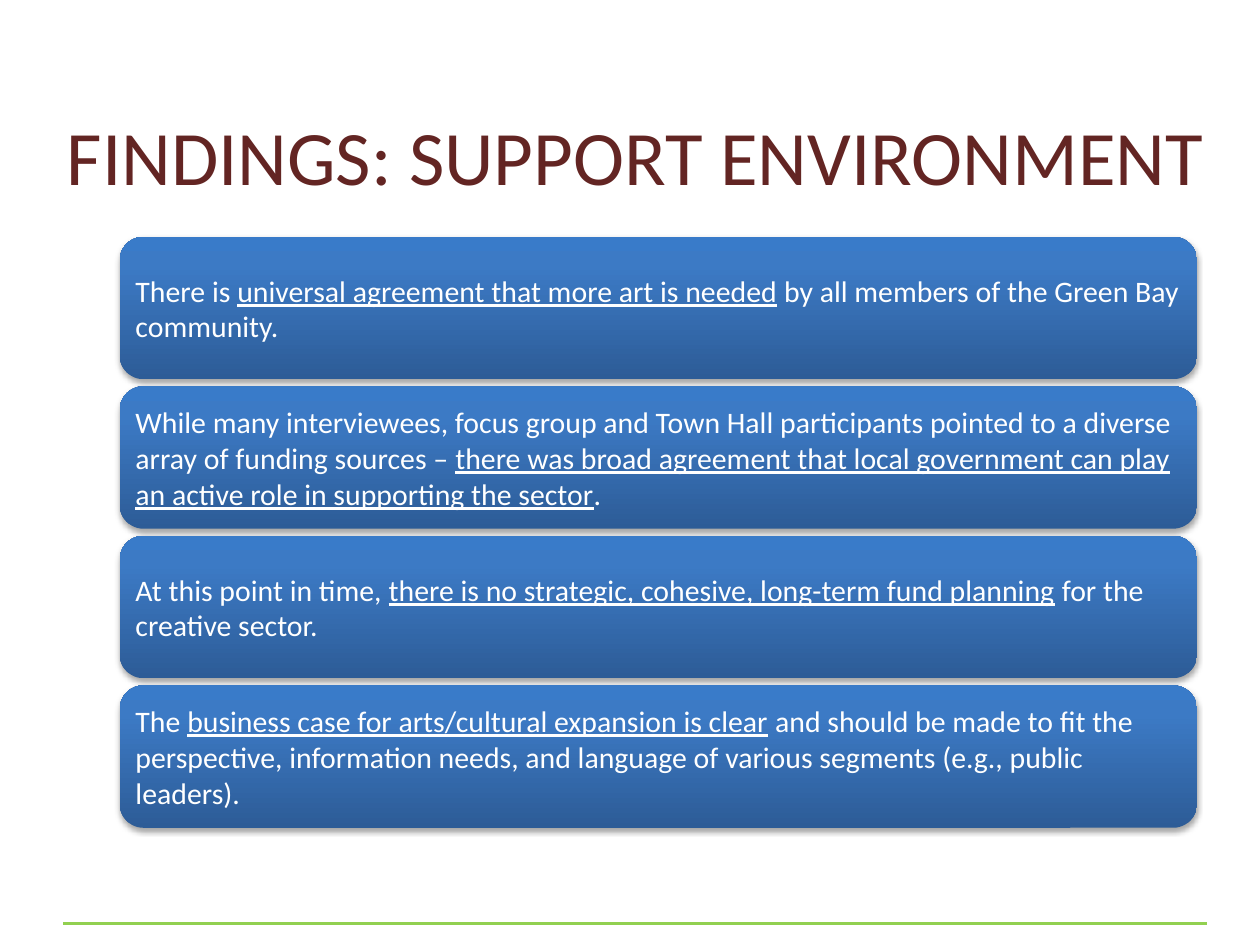
import copy
from typing import NamedTuple

import pptx
import pptx.dml.color
import pptx.enum.shapes
import pptx.enum.text
import pptx.oxml
import pptx.oxml.ns
import pptx.util
from pptx.util import Inches

COLORS = {
    "title": "632523",
    "card_text": "FFFFFF",
    "card_bottom": "2D5C97",
    "card_middle": "3C7AC5",
    "card_top": "397BC9",
    "footer_rule": "92D050",
    "shadow": "000000",
}
FONT = "Calibri"
CARD_LEFT, CARD_WIDTH, CARD_HEIGHT = 0.95, 8.55, 1.13
FIRST_CARD_TOP, LAST_CARD_TOP = 1.88, 5.44


class Finding(NamedTuple):
    lead: str
    key_point: str
    ending: str


FINDINGS = [
    Finding("There is ", "universal agreement that more art is needed",
            " by all members of the Green Bay community."),
    Finding("While many interviewees, focus group and Town Hall participants "
            "pointed to a diverse array of funding sources – ",
            "there was broad agreement that local government can play "
            "an active role in supporting the sector", "."),
    Finding("At this point in time, ",
            "there is no strategic, cohesive, long-term fund planning",
            " for the creative sector."),
    Finding("The ", "business case for arts/cultural expansion is clear",
            " and should be made to fit the perspective, information needs, "
            "and language of various segments (e.g., public leaders)."),
]


def rgb(name: str) -> pptx.dml.color.RGBColor:
    return pptx.dml.color.RGBColor.from_string(COLORS[name])


def set_frame(frame, margin_x: float, margin_y: float) -> None:
    settings = {
        "word_wrap": True,
        "vertical_anchor": pptx.enum.text.MSO_ANCHOR.MIDDLE,
        "margin_left": Inches(margin_x),
        "margin_right": Inches(margin_x),
        "margin_top": Inches(margin_y),
        "margin_bottom": Inches(margin_y),
    }
    for attribute, value in settings.items():
        setattr(frame, attribute, value)


def add_run(paragraph, text: str, size: int, color: str, underline: bool = False) -> None:
    run = paragraph.add_run()
    run.text = text
    settings = {"name": FONT, "size": pptx.util.Pt(size), "underline": underline}
    for attribute, value in settings.items():
        setattr(run.font, attribute, value)
    run.font.color.rgb = rgb(color)


def fill_card(card) -> None:
    """Apply a three-stop gradient running from the bottom edge to the top."""
    card.fill.gradient()
    card.fill.gradient_angle = 90
    stop_list = card.fill._xPr.find(".//" + pptx.oxml.ns.qn("a:gsLst"))
    stop_list.insert(1, copy.deepcopy(stop_list[0]))
    stops = [(0, "card_bottom"), (0.8, "card_middle"), (1, "card_top")]
    for stop, (position, color) in zip(card.fill.gradient_stops, stops):
        stop.position = position
        stop.color.rgb = rgb(color)


def cast_shadow(card) -> None:
    card.shadow.inherit = False
    effects = card._element.spPr.find(pptx.oxml.ns.qn("a:effectLst"))
    effects.append(pptx.oxml.parse_xml(
        f'<a:outerShdw {pptx.oxml.ns.nsdecls("a")} blurRad="{pptx.util.Pt(3.1)}" '
        f'dist="{pptx.util.Pt(1.8)}" dir="5400000" rotWithShape="0">'
        f'<a:srgbClr val="{COLORS["shadow"]}"><a:alpha val="35000"/></a:srgbClr>'
        "</a:outerShdw>"))


def add_card(slide, finding: Finding, top: float) -> None:
    card = slide.shapes.add_shape(
        pptx.enum.shapes.MSO_SHAPE.ROUNDED_RECTANGLE,
        Inches(CARD_LEFT), Inches(top), Inches(CARD_WIDTH), Inches(CARD_HEIGHT))
    card.adjustments[0] = 0.167
    fill_card(card)
    card.line.fill.background()
    cast_shadow(card)
    set_frame(card.text_frame, 0.07, 0.07)
    paragraph = card.text_frame.paragraphs[0]
    paragraph.alignment = pptx.enum.text.PP_ALIGN.LEFT
    for text, underline in zip(finding, (False, True, False)):
        add_run(paragraph, text, 17, "card_text", underline)


def add_title(slide, text: str) -> None:
    title = slide.shapes.add_textbox(
        Inches(0.17), Inches(0.75), Inches(9.75), Inches(0.96))
    set_frame(title.text_frame, 0.1, 0.05)
    paragraph = title.text_frame.paragraphs[0]
    paragraph.alignment = pptx.enum.text.PP_ALIGN.CENTER
    add_run(paragraph, text, 44, "title")


def add_footer_rule(slide) -> None:
    rule = slide.shapes.add_connector(
        pptx.enum.shapes.MSO_CONNECTOR.STRAIGHT,
        Inches(0.5), Inches(7.33), Inches(9.58), Inches(7.33))
    rule.line.color.rgb = rgb("footer_rule")
    rule.line.width = pptx.util.Pt(1.5)
    rule._element.spPr.append(
        pptx.oxml.parse_xml(f'<a:effectLst {pptx.oxml.ns.nsdecls("a")}/>'))


def main() -> None:
    presentation = pptx.Presentation()
    presentation.slide_width = Inches(10)
    presentation.slide_height = Inches(7.5)
    slide = presentation.slides.add_slide(presentation.slide_layouts[6])
    add_footer_rule(slide)
    add_title(slide, "FINDINGS: SUPPORT ENVIRONMENT")
    pitch = (LAST_CARD_TOP - FIRST_CARD_TOP) / (len(FINDINGS) - 1)
    for index, finding in enumerate(FINDINGS):
        add_card(slide, finding, FIRST_CARD_TOP + index * pitch)
    presentation.save("out.pptx")


if __name__ == "__main__":
    main()
